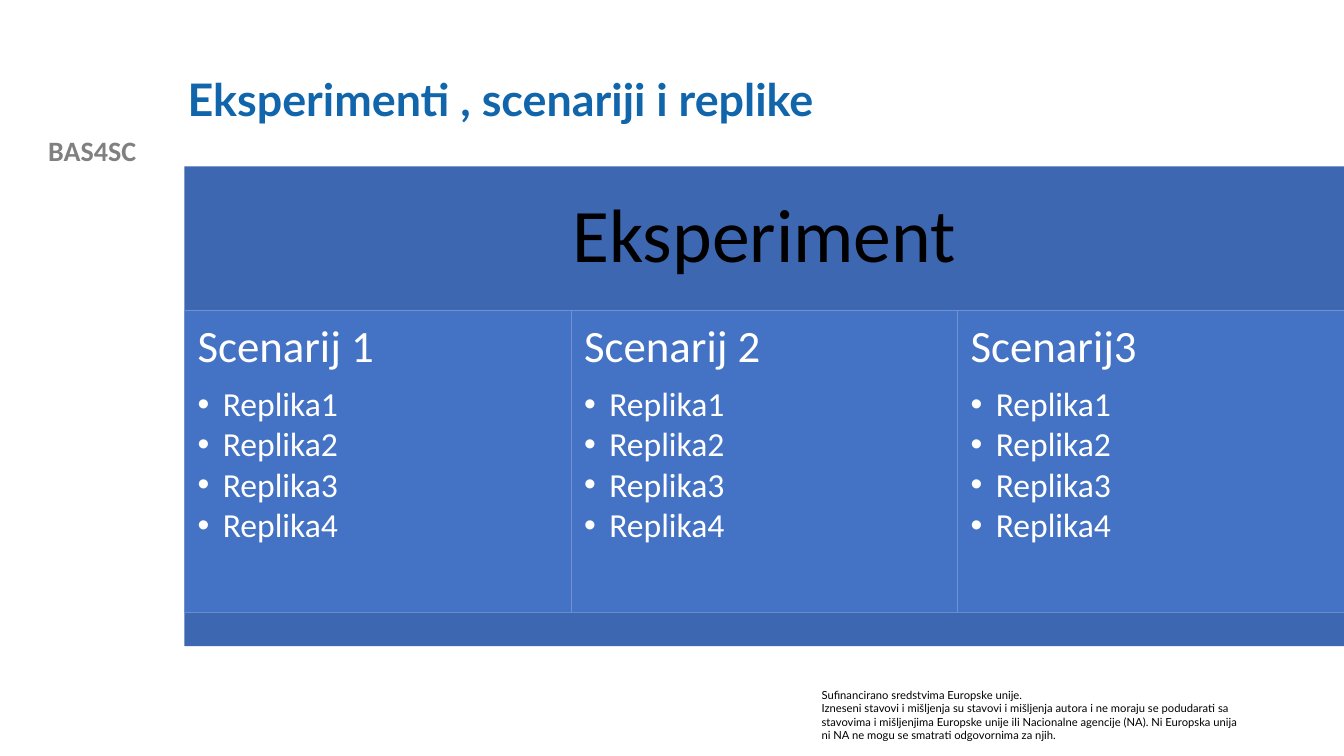
from collections import namedtuple
from dataclasses import dataclass

from pptx import Presentation
from pptx import util as u
from pptx.dml.color import RGBColor
from pptx.enum import shapes, text
from pptx.oxml.ns import qn
from lxml import etree

Box = namedtuple("Box", "left top width height")


@dataclass(frozen=True)
class Theme:
    title_font: str = "Lato"
    body_font: str = "Calibri"
    title: str = "1065AB"
    label: str = "808080"
    dark: str = "000000"
    light: str = "FFFFFF"
    band: str = "3E67B2"
    panel: str = "4472C4"
    panel_edge: str = "7391D2"
    title_size: float = 32
    label_size: float = 20
    notice_size: float = 8
    banner_size: float = 54
    heading_size: float = 32
    item_size: float = 24


THEME = Theme()


def inches(box):
    return [u.Inches(value) for value in box]


def style(para, font, size, color, bold=False):
    for span in para.runs:
        span.font.name = font
        span.font.size = u.Pt(size)
        span.font.bold = bold
        span.font.color.rgb = RGBColor.from_string(color)


def set_insets(frame, inset):
    frame.margin_left = frame.margin_right = u.Inches(inset)
    frame.margin_top = frame.margin_bottom = u.Inches(inset)


def add_rectangle(page, box, fill, edge=None):
    shape = page.shapes.add_shape(shapes.MSO_SHAPE.RECTANGLE, *inches(box))
    shape.shadow.inherit = False
    shape.fill.solid()
    shape.fill.fore_color.rgb = RGBColor.from_string(fill)
    if edge:
        shape.line.color.rgb = RGBColor.from_string(edge)
        shape.line.width = u.Pt(0.5)
    else:
        shape.line.fill.background()
    return shape


def add_bullet(para):
    properties = para._p.get_or_add_pPr()
    properties.set("marL", str(u.Inches(0.25)))
    properties.set("indent", str(u.Inches(-0.25)))
    etree.SubElement(properties, qn("a:buFont")).set("typeface", "Arial")
    etree.SubElement(properties, qn("a:buChar")).set("char", "•")


def add_title(page, box, wording):
    title = page.shapes.title
    title.left, title.top, title.width, title.height = inches(box)
    frame = title.text_frame
    frame.text = wording
    frame.auto_size = text.MSO_AUTO_SIZE.NONE
    frame.vertical_anchor = text.MSO_ANCHOR.MIDDLE
    para = frame.paragraphs[0]
    para.alignment = text.PP_ALIGN.LEFT
    para.line_spacing = 0.9
    style(para, THEME.title_font, THEME.title_size, THEME.title, True)


def add_text(page, box, wording, font, size, color, bold=False,
             alignment=text.PP_ALIGN.LEFT):
    frame = page.shapes.add_textbox(*inches(box)).text_frame
    frame.word_wrap = True
    frame.text = wording
    for para in frame.paragraphs:
        para.alignment = alignment
        style(para, font, size, color, bold)


def add_banner(page, box, wording):
    frame = add_rectangle(page, box, THEME.band).text_frame
    set_insets(frame, 0.23)
    frame.vertical_anchor = text.MSO_ANCHOR.MIDDLE
    frame.text = wording
    para = frame.paragraphs[0]
    para.alignment = text.PP_ALIGN.CENTER
    para.line_spacing = 0.9
    style(para, THEME.body_font, THEME.banner_size, THEME.dark)


def add_scenario(page, box, heading, items):
    frame = add_rectangle(page, box, THEME.panel, THEME.panel_edge).text_frame
    set_insets(frame, 0.13)
    frame.word_wrap = True
    frame.vertical_anchor = text.MSO_ANCHOR.TOP
    frame.text = "\n".join([heading, *items])
    for index, para in enumerate(frame.paragraphs):
        para.alignment = text.PP_ALIGN.LEFT
        para.line_spacing = 0.9
        para.space_after = u.Pt(3 if index else 11)
        if index:
            para.level = 1
            add_bullet(para)
        size = THEME.item_size if index else THEME.heading_size
        style(para, THEME.body_font, size, THEME.light)


def add_experiment(page, box, name, scenarios, items):
    banner_height, panel_height = 1.43, 3
    panel_top = box.top + banner_height
    panel_bottom = panel_top + panel_height
    panel_width = box.width / len(scenarios)
    add_banner(page, box._replace(height=banner_height), name)
    for column, scenario in enumerate(scenarios):
        left = box.left + column * panel_width
        add_scenario(page, Box(left, panel_top, panel_width, panel_height),
                     scenario, items)
    footer_height = box.top + box.height - panel_bottom
    add_rectangle(page, box._replace(top=panel_bottom, height=footer_height),
                  THEME.band)


def main():
    deck = Presentation()
    deck.slide_width, deck.slide_height = u.Inches(13.33), u.Inches(7.5)
    page = deck.slides.add_slide(deck.slide_layouts[5])
    add_text(page, Box(0, 1.28, 1.83, 0.43), "BAS4SC", THEME.body_font,
             THEME.label_size, THEME.label, True, text.PP_ALIGN.CENTER)
    add_text(page, Box(8.05, 6.78, 4.37, 0.64),
             "Sufinancirano sredstvima Europske unije.\n"
             "Izneseni stavovi i mišljenja su stavovi i mišljenja autora i ne "
             "moraju se podudarati sa stavovima i mišljenjima Europske unije "
             "ili Nacionalne agencije (NA). Ni Europska unija ni NA ne mogu "
             "se smatrati odgovornima za njih.",
             THEME.title_font, THEME.notice_size, THEME.dark)
    add_title(page, Box(1.76, 0.4, 10.66, 1.22),
              "Eksperimenti , scenariji i replike")
    add_experiment(page, Box(1.83, 1.65, 11.5, 4.76), "Eksperiment",
                   ["Scenarij 1", "Scenarij 2", "Scenarij3"],
                   [f"Replika{number}" for number in range(1, 5)])
    deck.save("out.pptx")


if __name__ == "__main__":
    main()
